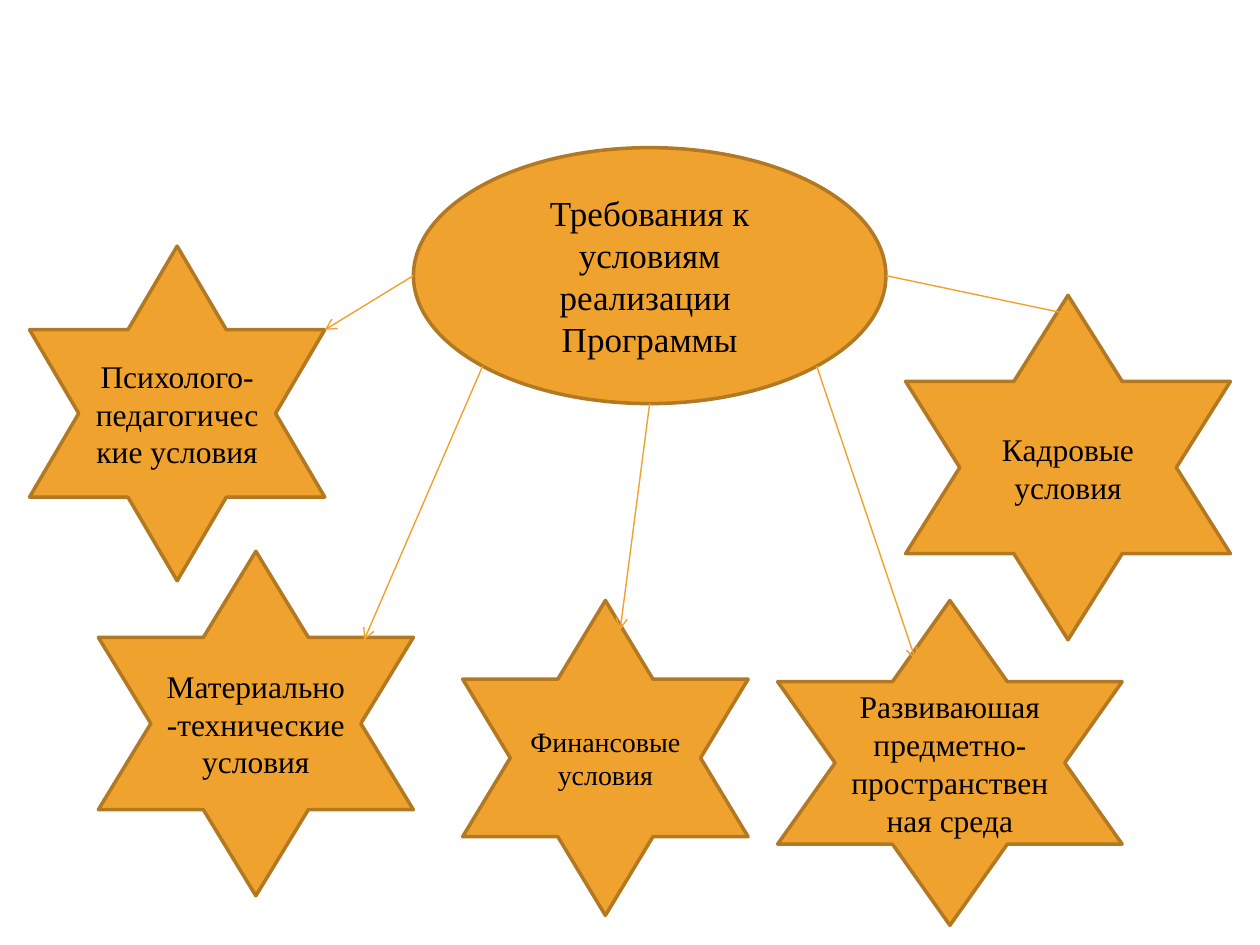
from dataclasses import dataclass

from lxml import etree
from pptx import Presentation
from pptx.dml.color import RGBColor
from pptx.enum import shapes, text
from pptx.oxml import ns
from pptx.util import Pt


@dataclass(frozen=True)
class Theme:
    fill: RGBColor = RGBColor(0xF0, 0xA2, 0x2E)
    outline: RGBColor = RGBColor(0xB2, 0x78, 0x22)
    ink: RGBColor = RGBColor(0, 0, 0)
    font: str = "Times New Roman"
    outline_width: float = 2
    arrow_width: float = 0.79
    topic_size: int = 20
    condition_size: int = 18
    small_size: int = 16


theme = Theme()
deck = Presentation()
deck.slide_width, deck.slide_height = Pt(720), Pt(540)
slide = deck.slides.add_slide(deck.slide_layouts[6])


def add_bubble(preset, box, wording, size):
    bubble = slide.shapes.add_shape(preset, *(Pt(length) for length in box))
    bubble.shadow.inherit = False
    bubble.fill.solid()
    bubble.fill.fore_color.rgb = theme.fill
    bubble.line.color.rgb = theme.outline
    bubble.line.width = Pt(theme.outline_width)
    frame = bubble.text_frame
    frame.word_wrap = True
    frame.vertical_anchor = text.MSO_ANCHOR.MIDDLE
    paragraph = frame.paragraphs[0]
    paragraph.text = wording
    paragraph.alignment = text.PP_ALIGN.CENTER
    paragraph.font.name = theme.font
    paragraph.font.size = Pt(size)
    paragraph.font.color.rgb = theme.ink


# Central topic
add_bubble(shapes.MSO_SHAPE.OVAL, (236.25, 84.38, 270, 146.25),
           "Требования к условиям реализации  Программы", theme.topic_size)

# Conditions around the topic: left, top, width, height
conditions = [
    ((16.88, 140.63, 168.75, 191.25), "Психолого-педагогические условия",
     theme.condition_size),
    ((56.25, 315, 180, 196.88), "Материально-технические условия",
     theme.condition_size),
    ((264.38, 343.13, 163.13, 180), "Финансовые условия", theme.small_size),
    ((444.38, 343.13, 196.88, 185.63),
     "Развиваюшая предметно-пространственная среда", theme.condition_size),
    ((517.5, 168.75, 185.63, 196.88), "Кадровые условия",
     theme.condition_size),
]
for box, wording, size in conditions:
    add_bubble(shapes.MSO_SHAPE.STAR_6_POINT, box, wording, size)

# Arrows from the topic to each condition: start x, y, end x, y
arrows = [
    (236.25, 157.5, 185.63, 188.5),
    (275.8, 209.2, 208.13, 365.63),
    (371.25, 230.63, 354.38, 360),
    (466.7, 209.2, 523.13, 376.88),
    (506.25, 157.5, 613.13, 180),
]
for ends in arrows:
    arrow = slide.shapes.add_connector(
        shapes.MSO_CONNECTOR.STRAIGHT, *(Pt(length) for length in ends))
    arrow.line.color.rgb = theme.fill
    arrow.line.width = Pt(theme.arrow_width)
    etree.SubElement(arrow.line._get_or_add_ln(), ns.qn("a:tailEnd"), type="arrow")
    etree.SubElement(arrow._element.spPr, ns.qn("a:effectLst"))

deck.save("out.pptx")
